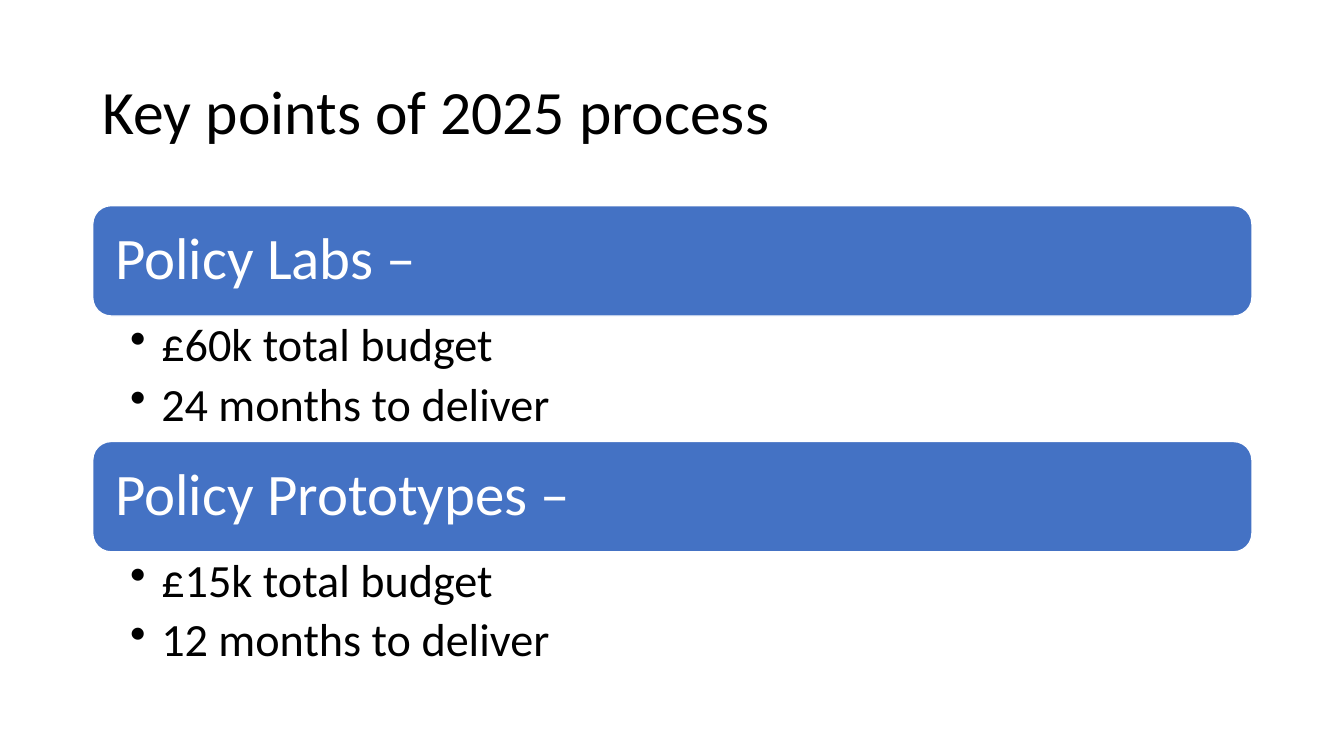
from lxml import etree
from pptx import Presentation
from pptx.dml.color import RGBColor
from pptx.enum.shapes import MSO_SHAPE
from pptx.enum.text import MSO_ANCHOR, PP_ALIGN
from pptx.oxml.ns import qn
from pptx.util import Inches, Pt

BLACK = RGBColor(0x00, 0x00, 0x00)
WHITE = RGBColor(0xFF, 0xFF, 0xFF)
BLUE = RGBColor(0x44, 0x72, 0xC4)
ROUNDED = MSO_SHAPE.ROUNDED_RECTANGLE
MIDDLE = MSO_ANCHOR.MIDDLE
TOP = MSO_ANCHOR.TOP
LEFT = PP_ALIGN.LEFT

MARGIN = 6.9
CONTENT_WIDTH = 86.25
TITLE_TOP, TITLE_HEIGHT = 5.5, 19.33
SECTIONS_TOP = 27.2
BAR_HEIGHT = 14.6
LIST_HEIGHT = 16.6

SECTIONS = [
    ("Policy Labs –", ["£60k total budget", "24 months to deliver"]),
    ("Policy Prototypes –", ["£15k total budget", "12 months to deliver"]),
]


class SlideBuilder:
    font_name = "Calibri"
    line_spacing = 0.9

    def __init__(self, presentation):
        self.column = presentation.slide_width / 100
        self.row = presentation.slide_height / 100
        self.slide = presentation.slides.add_slide(presentation.slide_layouts[6])

    def box(self, top, height):
        return (round(MARGIN * self.column), round(top * self.row),
                round(CONTENT_WIDTH * self.column), round(height * self.row))

    def set_text(self, shape, lines, size, color, anchor, side, edge=0.05, after=0):
        frame = shape.text_frame
        frame.word_wrap = True
        frame.vertical_anchor = anchor
        frame.margin_left = frame.margin_right = Inches(side)
        frame.margin_top = frame.margin_bottom = Inches(edge)
        frame.text = "\n".join(lines)
        for paragraph in frame.paragraphs:
            paragraph.alignment = LEFT
            paragraph.line_spacing = self.line_spacing
            paragraph.space_after = Pt(after)
            paragraph.font.name = self.font_name
            paragraph.font.size = Pt(size)
            paragraph.font.color.rgb = color
        return frame.paragraphs

    def title(self, text):
        shape = self.slide.shapes.add_textbox(*self.box(TITLE_TOP, TITLE_HEIGHT))
        self.set_text(shape, [text], 44, BLACK, MIDDLE, 0.1)

    def bar(self, top, text):
        shape = self.slide.shapes.add_shape(ROUNDED, *self.box(top, BAR_HEIGHT))
        shape.shadow.inherit = False
        shape.fill.solid()
        shape.fill.fore_color.rgb = BLUE
        shape.line.color.rgb = WHITE
        shape.line.width = Pt(1)
        self.set_text(shape, [text], 42, WHITE, MIDDLE, 0.17)

    def bullets(self, top, lines):
        shape = self.slide.shapes.add_textbox(*self.box(top, LIST_HEIGHT))
        for paragraph in self.set_text(shape, lines, 33, BLACK, TOP, 0.37, 0.06, 6.6):
            properties = paragraph._p.get_or_add_pPr()
            properties.set("marL", str(Inches(0.31)))
            properties.set("indent", str(-Inches(0.31)))
            bullet = etree.Element(qn("a:buChar"), char="•")
            properties.find(qn("a:defRPr")).addprevious(bullet)


def main():
    presentation = Presentation()
    presentation.slide_width = Inches(13.33)
    presentation.slide_height = Inches(7.5)
    builder = SlideBuilder(presentation)
    builder.title("Key points of 2025 process")
    for index, (heading, points) in enumerate(SECTIONS):
        top = SECTIONS_TOP + index * (BAR_HEIGHT + LIST_HEIGHT)
        builder.bar(top, heading)
        builder.bullets(top + BAR_HEIGHT, points)
    presentation.save("out.pptx")


if __name__ == "__main__":
    main()
